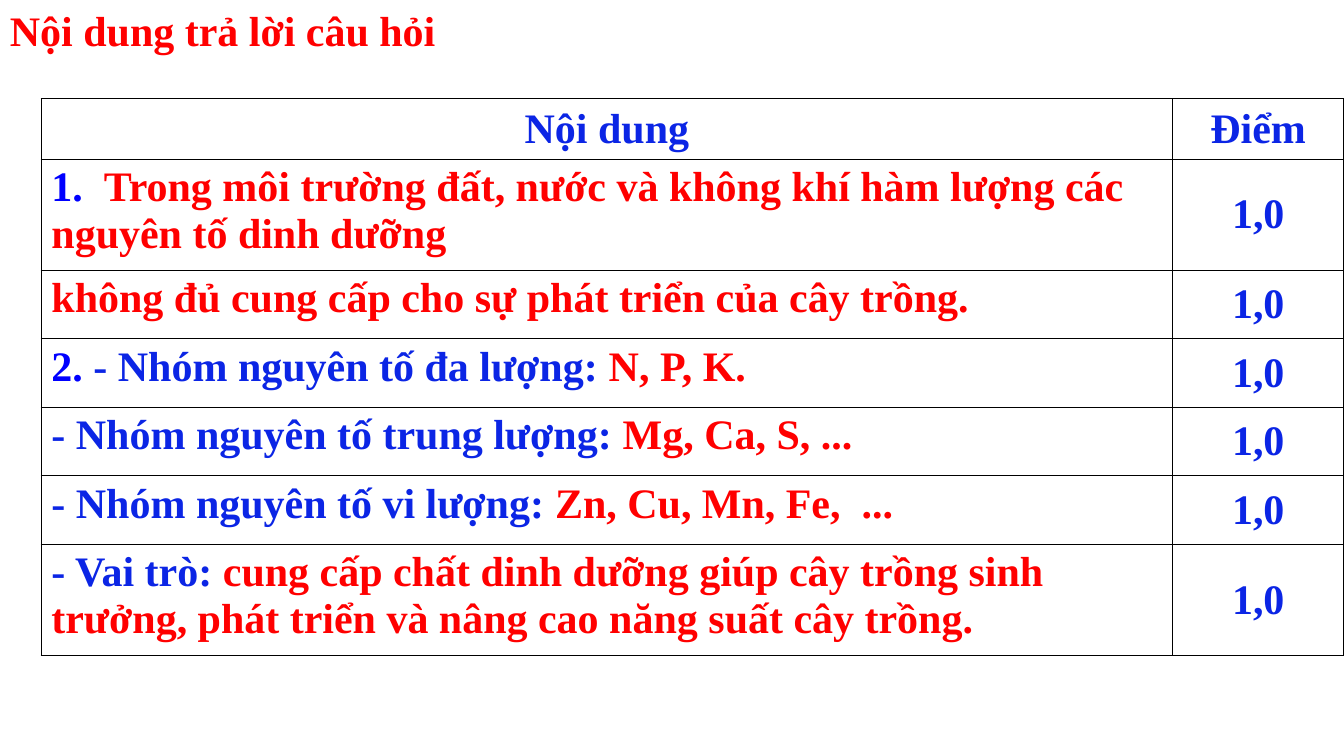
from lxml.etree import SubElement
from pptx import Presentation
from pptx.dml.color import RGBColor
from pptx.enum.text import MSO_ANCHOR as Anchor, PP_ALIGN as Align
from pptx.oxml.ns import qn
from pptx.util import Inches, Pt

COLORS = {"red": "FF0000", "blue": "0B25E5", "number": "0000FF",
          "white": "FFFFFF", "border": "000000"}
COLUMN_WIDTHS = [11.22, 1.7]
ROW_HEIGHTS = [0.6, 1.1, 0.68, 0.68, 0.68, 0.68, 1.1]
POINTS = "1,0"
ANSWERS = [
    [("1.  ", "number"),
     ("Trong môi trường đất, nước và không khí hàm lượng các nguyên tố dinh dưỡng", "red")],
    [("không đủ cung cấp cho sự phát triển của cây trồng.", "red")],
    [("2. ", "number"), ("- Nhóm nguyên tố đa lượng: ", "blue"), ("N, P, K.", "red")],
    [("- Nhóm nguyên tố trung lượng: ", "blue"), ("Mg, Ca, S, ...", "red")],
    [("- Nhóm nguyên tố vi lượng: ", "blue"), ("Zn, Cu, Mn, Fe,  ...", "red")],
    [("- Vai trò: ", "blue"),
     ("cung cấp chất dinh dưỡng giúp cây trồng sinh trưởng, "
      "phát triển và nâng cao năng suất cây trồng.", "red")],
]


def add_text(paragraph, text, color="blue", size=30, bold=True, font="Times New Roman"):
    """Append a formatted run to a paragraph."""
    run = paragraph.add_run()
    run.text = text
    run.font.name = font
    run.font.size = Pt(size)
    run.font.bold = bold
    run.font.color.rgb = RGBColor.from_string(COLORS[color])


def style_cell(cell):
    """Give a cell black borders and a white fill."""
    properties = cell._tc.get_or_add_tcPr()
    for side in ("lnL", "lnR", "lnT", "lnB"):
        line = SubElement(properties, qn(f"a:{side}"), w=str(Pt(1)))
        fill = SubElement(line, qn("a:solidFill"))
        SubElement(fill, qn("a:srgbClr"), val=COLORS["border"])
    cell.fill.solid()
    cell.fill.fore_color.rgb = RGBColor.from_string(COLORS["white"])


def fill_cell(cell, runs, centered=False):
    """Write coloured runs into a styled cell."""
    style_cell(cell)
    paragraph = cell.text_frame.paragraphs[0]
    if centered:
        cell.vertical_anchor = Anchor.MIDDLE
        paragraph.alignment = Align.CENTER
    for text, color in runs:
        add_text(paragraph, text, color=color)


def add_title(slide, left, top, width, height):
    """Place the slide heading in the given box."""
    box = slide.shapes.add_textbox(Inches(left), Inches(top), Inches(width), Inches(height))
    box.text_frame.word_wrap = True
    add_text(box.text_frame.paragraphs[0], "Nội dung trả lời câu hỏi", color="red")


def add_answer_table(slide, left, top, width, height):
    """Place the table of answers and points in the given box."""
    frame = slide.shapes.add_table(len(ROW_HEIGHTS), len(COLUMN_WIDTHS), Inches(left),
                                   Inches(top), Inches(width), Inches(height))
    table = frame.table
    for column, share in zip(table.columns, COLUMN_WIDTHS):
        column.width = Inches(width * share / sum(COLUMN_WIDTHS))
    for row, share in zip(table.rows, ROW_HEIGHTS):
        row.height = Inches(height * share / sum(ROW_HEIGHTS))
    for index, heading in enumerate(["Nội dung", "Điểm"]):
        fill_cell(table.cell(0, index), [(heading, "blue")], centered=True)
    for index, answer in enumerate(ANSWERS, start=1):
        fill_cell(table.cell(index, 0), answer)
        fill_cell(table.cell(index, 1), [(POINTS, "blue")], centered=True)


def main():
    """Build and save the presentation."""
    presentation = Presentation()
    presentation.slide_width = Inches(13.33)
    presentation.slide_height = Inches(7.5)
    slide = presentation.slides.add_slide(presentation.slide_layouts[6])
    add_title(slide, 0, 0, 8.76, 0.61)
    add_answer_table(slide, 0.41, 0.98, sum(COLUMN_WIDTHS), sum(ROW_HEIGHTS))
    presentation.save("out.pptx")


if __name__ == "__main__":
    main()
